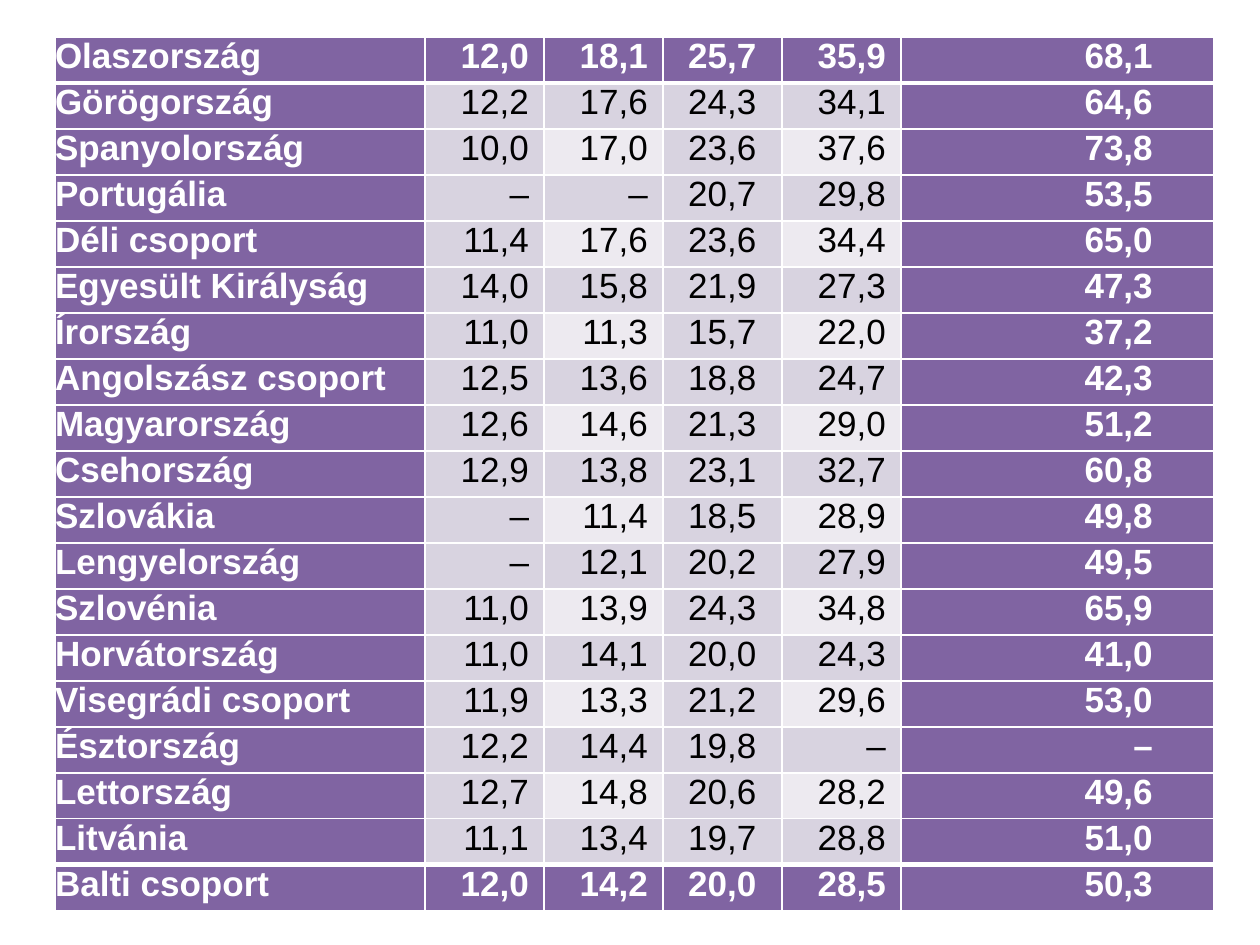
import pptx
import pptx.dml.color
import pptx.enum.text
import pptx.oxml.ns
import pptx.util
from lxml import etree

PX = 914400 // 126
WHITE = pptx.dml.color.RGBColor(0xFF, 0xFF, 0xFF)
BLACK = pptx.dml.color.RGBColor(0x00, 0x00, 0x00)
PURPLE = pptx.dml.color.RGBColor(0x80, 0x64, 0xA2)
LILAC = pptx.dml.color.RGBColor(0xD8, 0xD3, 0xE0)
PALE = pptx.dml.color.RGBColor(0xED, 0xEA, 0xF0)
ALIGN = pptx.enum.text.PP_ALIGN

LEFT, TOP, ROW_HEIGHT = 55, 37, 46
COLUMN_WIDTHS = [370, 119, 119, 119, 119, 313]
# Alignment, left indent and right indent of each column
COLUMN_LAYOUT = [
    (ALIGN.LEFT, 0, 0),
    (ALIGN.RIGHT, 0, 15),
    (ALIGN.RIGHT, 0, 15),
    (ALIGN.CENTER, 13, 13),
    (ALIGN.RIGHT, 0, 15),
    (ALIGN.RIGHT, 0, 61),
]

COUNTRIES = [
    ("Olaszország", "12,0", "18,1", "25,7", "35,9", "68,1"),
    ("Görögország", "12,2", "17,6", "24,3", "34,1", "64,6"),
    ("Spanyolország", "10,0", "17,0", "23,6", "37,6", "73,8"),
    ("Portugália", "–", "–", "20,7", "29,8", "53,5"),
    ("Déli csoport", "11,4", "17,6", "23,6", "34,4", "65,0"),
    ("Egyesült Királyság", "14,0", "15,8", "21,9", "27,3", "47,3"),
    ("Írország", "11,0", "11,3", "15,7", "22,0", "37,2"),
    ("Angolszász csoport", "12,5", "13,6", "18,8", "24,7", "42,3"),
    ("Magyarország", "12,6", "14,6", "21,3", "29,0", "51,2"),
    ("Csehország", "12,9", "13,8", "23,1", "32,7", "60,8"),
    ("Szlovákia", "–", "11,4", "18,5", "28,9", "49,8"),
    ("Lengyelország", "–", "12,1", "20,2", "27,9", "49,5"),
    ("Szlovénia", "11,0", "13,9", "24,3", "34,8", "65,9"),
    ("Horvátország", "11,0", "14,1", "20,0", "24,3", "41,0"),
    ("Visegrádi csoport", "11,9", "13,3", "21,2", "29,6", "53,0"),
    ("Észtország", "12,2", "14,4", "19,8", "–", "–"),
    ("Lettország", "12,7", "14,8", "20,6", "28,2", "49,6"),
    ("Litvánia", "11,1", "13,4", "19,7", "28,8", "51,0"),
    ("Balti csoport", "12,0", "14,2", "20,0", "28,5", "50,3"),
]


def px(length):
    return pptx.util.Emu(length * PX)


def set_borders(cell, top, bottom):
    properties = cell._tc.get_or_add_tcPr()
    for side, width in (("L", 1), ("R", 1), ("T", top), ("B", bottom)):
        line = etree.SubElement(properties, pptx.oxml.ns.qn(f"a:ln{side}"),
                                w=str(pptx.util.Pt(width)))
        fill = etree.SubElement(line, pptx.oxml.ns.qn("a:solidFill"))
        etree.SubElement(fill, pptx.oxml.ns.qn("a:srgbClr"), val=str(WHITE))


def write_text(cell, text, *, color, bold, align, indent_left, indent_right):
    cell.margin_left = cell.margin_right = cell.margin_top = cell.margin_bottom = 0
    para = cell.text_frame.paragraphs[0]
    para.alignment = align
    properties = para._p.get_or_add_pPr()
    properties.set("marL", str(px(indent_left)))
    properties.set("marR", str(px(indent_right)))
    properties.set("indent", "0")
    span = para.add_run()
    span.text = text
    span.font.name = "Arial"
    span.font.size = pptx.util.Pt(20)
    span.font.bold = bold
    span.font.color.rgb = color


def add_country_table(page):
    last_row, last_column = len(COUNTRIES) - 1, len(COLUMN_WIDTHS) - 1
    table = page.shapes.add_table(
        len(COUNTRIES), len(COLUMN_WIDTHS), px(LEFT), px(TOP),
        px(sum(COLUMN_WIDTHS)), px(ROW_HEIGHT * len(COUNTRIES))).table
    table.first_row = table.horz_banding = False
    for column, width in zip(table.columns, COLUMN_WIDTHS):
        column.width = px(width)
    for i, country in enumerate(COUNTRIES):
        table.rows[i].height = px(ROW_HEIGHT)
        # Thick rules set off the first and last rows
        top = 3 if i in (1, last_row) else 1
        bottom = 3 if i in (0, last_row - 1) else 1
        for j, text in enumerate(country):
            cell = table.cell(i, j)
            framed = i in (0, last_row) or j in (0, last_column)
            band = PALE if i % 2 == 0 and j % 2 == 0 else LILAC
            align, indent_left, indent_right = COLUMN_LAYOUT[j]
            set_borders(cell, top, bottom)
            cell.fill.solid()
            cell.fill.fore_color.rgb = PURPLE if framed else band
            write_text(cell, text, color=WHITE if framed else BLACK, bold=framed,
                       align=align, indent_left=indent_left, indent_right=indent_right)


def main():
    deck = pptx.Presentation()
    deck.slide_width, deck.slide_height = px(1260), px(945)
    page = deck.slides.add_slide(deck.slide_layouts[6])
    add_country_table(page)
    deck.save("out.pptx")


if __name__ == "__main__":
    main()
